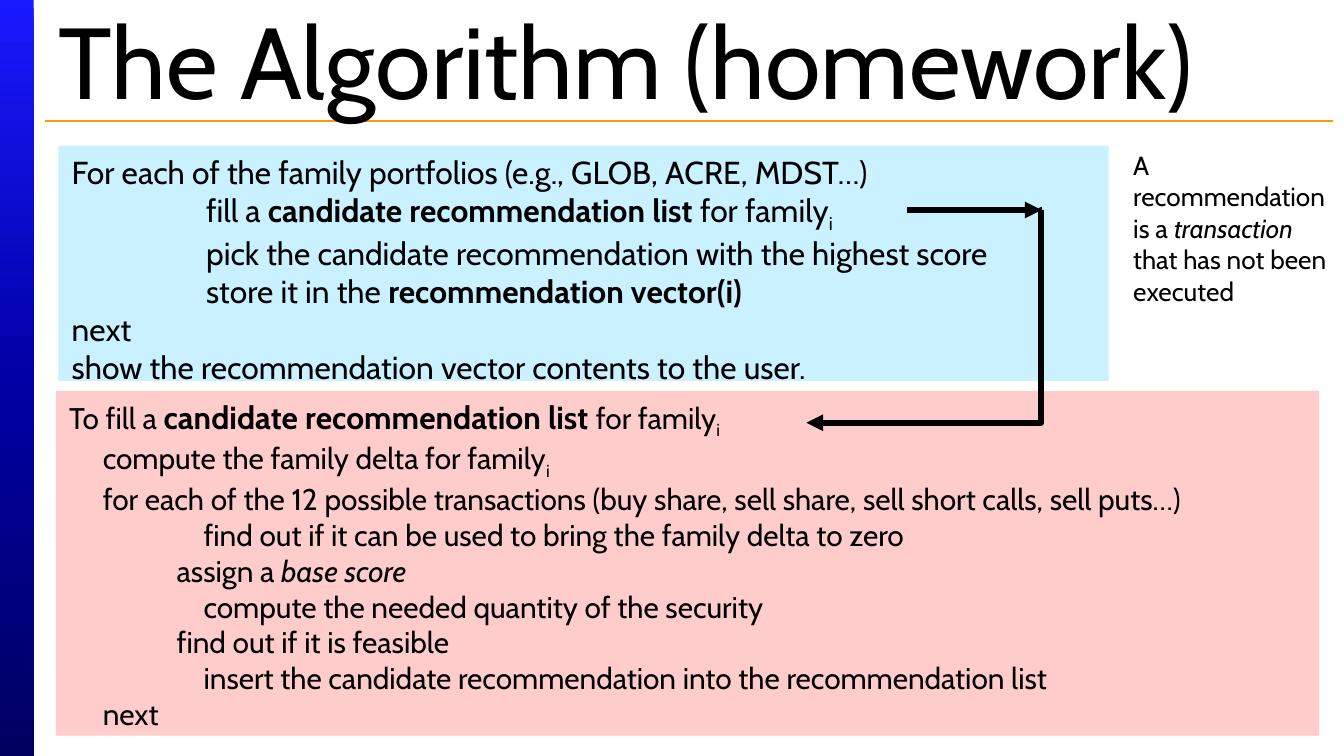
from collections import namedtuple
from dataclasses import dataclass

from lxml.etree import SubElement
from pptx import Presentation
from pptx.dml.color import RGBColor
from pptx.enum.shapes import MSO_CONNECTOR, MSO_SHAPE
from pptx.enum.text import MSO_ANCHOR, MSO_AUTO_SIZE, PP_ALIGN
from pptx.oxml.ns import qn
from pptx.util import Inches, Pt

# The slide is a grid of 120 columns by 67.5 rows, 12 to the inch
COLUMNS, ROWS, PER_INCH = 120, 67.5, 12
Box = namedtuple("Box", "left top width height")


@dataclass(frozen=True)
class Theme:
    font: str = "Cabin"
    ink: str = "000000"
    rule: str = "FF9900"
    main_panel: str = "C9F1FF"
    detail_panel: str = "FFCCCC"
    bar: tuple = ((0, "1919FF"), (50, "0000A5"), (100, "000060"))
    title_size: int = 54
    main_size: int = 17
    detail_size: int = 16
    note_size: int = 14
    rule_width: float = 0.75
    arrow_width: float = 3


THEME = Theme()
BOLD, ITALIC, SUB = {"bold": True}, {"italic": True}, {"subscript": True}

# Each line is an indent in columns followed by (text, format) runs
MAIN_STEPS = [
    (0, ("For each of the family portfolios (e.g., GLOB, ACRE, MDST…)", {})),
    (12, ("fill a ", {}), ("candidate recommendation list ", BOLD),
     ("for family", {}), ("i", SUB)),
    (12, ("pick the candidate recommendation with the highest score", {})),
    (12, ("store it in the ", {}), ("recommendation vector(i)", BOLD)),
    (0, ("next", {})),
    (0, ("show the recommendation vector contents to the user.", {})),
]
DETAIL_STEPS = [
    (0, ("To fill a ", {}),
     ("candidate recommendation list ", {"bold": True, "size": THEME.main_size}),
     ("for family", {}), ("i", SUB)),
    (3, ("compute the family delta for family", {}), ("i", SUB)),
    (3, ("for each of the 12 possible transactions "
         "(buy share, sell share, sell short calls, sell puts…)", {})),
    (12, ("find out if it can be used to bring the family delta to zero", {})),
    (9.6, ("assign a ", {}), ("base score", ITALIC)),
    (12, ("compute the needed quantity of the security", {})),
    (9.6, ("find out if it is feasible", {})),
    (12, ("insert the candidate recommendation into the recommendation list", {})),
    (3, ("next", {})),
]
NOTE = [(0, ("A recommendation is a ", {}), ("transaction ", ITALIC),
         ("that has not been executed", {}))]


def grid(units):
    return Inches(units / PER_INCH)


def place(shape, box):
    shape.left, shape.top, shape.width, shape.height = map(grid, box)


def add_text(paragraph, text, size, bold=False, italic=False, subscript=False):
    run = paragraph.add_run()
    run.text = text
    font = run.font
    font.name, font.size = THEME.font, Pt(size)
    font.bold, font.italic = bold, italic
    font.color.rgb = RGBColor.from_string(THEME.ink)
    if subscript:
        run._r.get_or_add_rPr().set("baseline", "-25000")


def write_lines(shape, lines, size, anchor=MSO_ANCHOR.TOP):
    frame = shape.text_frame
    frame.word_wrap, frame.auto_size = True, MSO_AUTO_SIZE.NONE
    frame.vertical_anchor = anchor
    for number, (indent, *runs) in enumerate(lines):
        paragraph = frame.add_paragraph() if number else frame.paragraphs[0]
        paragraph.alignment = PP_ALIGN.LEFT
        paragraph.space_before = Pt(0)
        properties = paragraph._p.get_or_add_pPr()
        properties.set("marL", str(grid(indent)))
        properties.set("indent", "0")
        SubElement(properties, qn("a:buNone"))
        for text, style in runs:
            add_text(paragraph, text, **{"size": size, **style})


def fill_solid(shape, color):
    shape.fill.solid()
    shape.fill.fore_color.rgb = RGBColor.from_string(color)


def add_line(slide, start, end, color, width, bent=False, arrow=False):
    kind = MSO_CONNECTOR.ELBOW if bent else MSO_CONNECTOR.STRAIGHT
    line = slide.shapes.add_connector(kind, *map(grid, start + end))
    line.line.color.rgb = RGBColor.from_string(color)
    line.line.width = Pt(width)
    properties = line._element.spPr
    if bent:  # turn right at the start
        adjustments = properties.find(qn("a:prstGeom")).find(qn("a:avLst"))
        SubElement(adjustments, qn("a:gd"), name="adj1", fmla="val 200")
    if arrow:
        SubElement(properties.find(qn("a:ln")), qn("a:tailEnd"), type="triangle")
    SubElement(properties, qn("a:effectLst"))
    return line


def add_side_bar(slide, box):
    bar = slide.shapes.add_shape(MSO_SHAPE.RECTANGLE, *map(grid, box))
    bar.shadow.inherit = False
    bar.line.fill.background()
    bar.fill.gradient()
    gradient = bar._element.spPr.find(qn("a:gradFill"))
    stops = gradient.find(qn("a:gsLst"))
    stops.clear()
    for position, color in THEME.bar:
        stop = SubElement(stops, qn("a:gs"), pos=str(position * 1000))
        SubElement(stop, qn("a:srgbClr"), val=color)
    gradient.find(qn("a:lin")).set("ang", "5400000")


def add_heading(slide, box):
    title = slide.shapes.title
    place(title, box)
    write_lines(title, [(0, ("The Algorithm (homework)", {}))],
                THEME.title_size, MSO_ANCHOR.MIDDLE)
    rule_row = box.top + box.height + 1.05
    rule = add_line(slide, (box.left, rule_row), (box.left + box.width, rule_row),
                    THEME.rule, THEME.rule_width)
    slide.shapes._spTree.insert(2, rule._element)  # behind the title


def add_main_steps(slide, box):
    steps = slide.placeholders[1]
    place(steps, box)
    fill_solid(steps, THEME.main_panel)
    write_lines(steps, MAIN_STEPS, THEME.main_size)


def add_note(slide, box):
    note = slide.shapes.add_textbox(*map(grid, box))
    write_lines(note, NOTE, THEME.note_size)


def add_detail_steps(slide, box):
    steps = slide.shapes.add_shape(MSO_SHAPE.RECTANGLE, *map(grid, box))
    steps.shadow.inherit = False
    steps.line.fill.background()
    fill_solid(steps, THEME.detail_panel)
    write_lines(steps, DETAIL_STEPS, THEME.detail_size)


def add_call_arrows(slide, box):
    right, bottom = box.left + box.width, box.top + box.height
    corner = (right, box.top)
    add_line(slide, corner, (box.left, bottom), THEME.ink, THEME.arrow_width,
             bent=True, arrow=True)
    add_line(slide, (right - PER_INCH, box.top), corner, THEME.ink,
             THEME.arrow_width, arrow=True)


def main():
    deck = Presentation()
    deck.slide_width, deck.slide_height = grid(COLUMNS), grid(ROWS)
    slide = deck.slides.add_slide(deck.slide_layouts[1])
    add_side_bar(slide, Box(0, 0, 3, ROWS))
    add_heading(slide, Box(4, 0.75, 115, 9))
    add_main_steps(slide, Box(5.2, 13, 93.8, 21))
    add_note(slide, Box(100, 12.75, 20, 15))
    add_detail_steps(slide, Box(5, 34.9, 112.8, 30.8))
    add_call_arrows(slide, Box(72, 18.75, 21, 19))
    deck.save("out.pptx")


if __name__ == "__main__":
    main()
